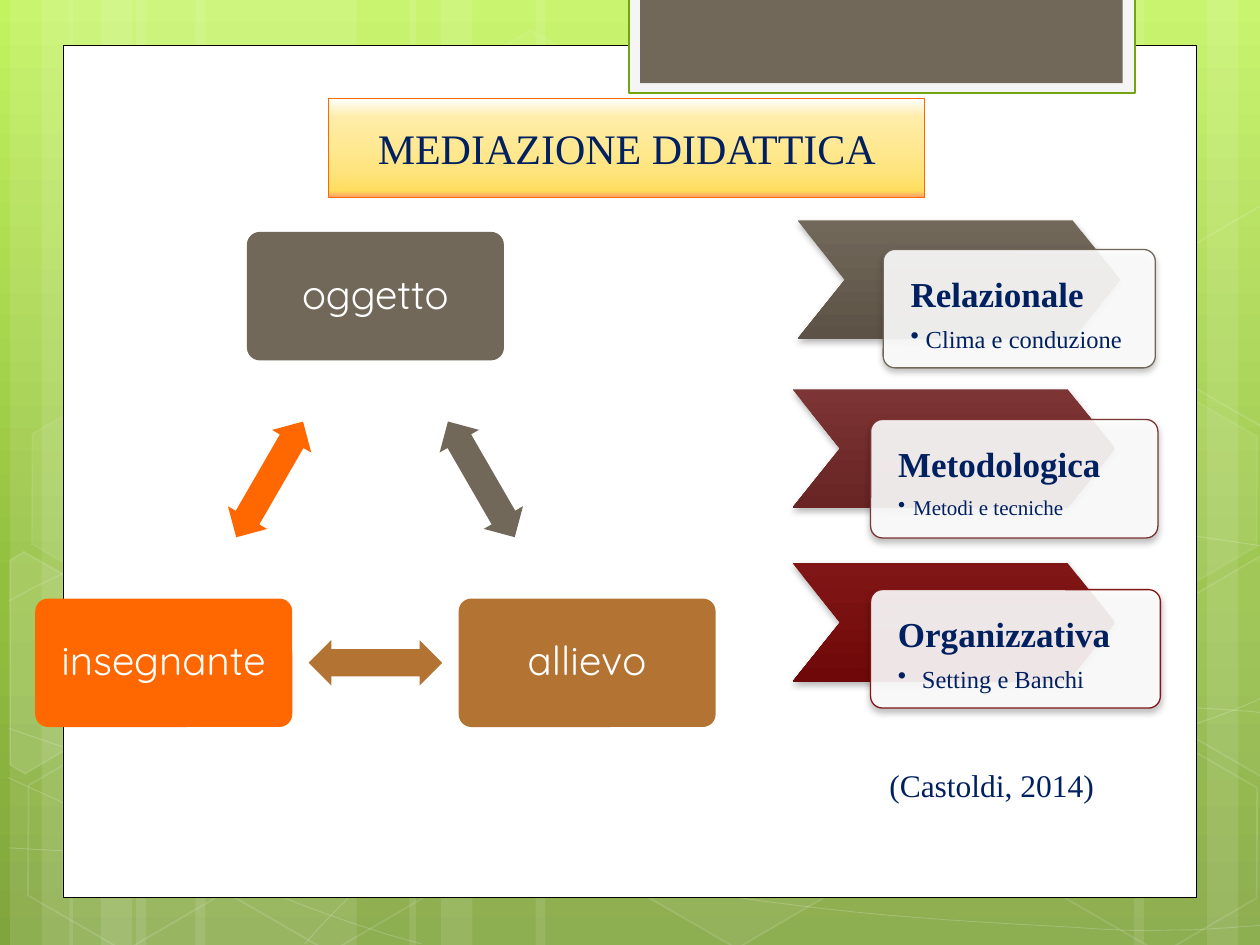
from lxml.etree import SubElement
from pptx import Presentation
from pptx.dml.color import RGBColor
from pptx.enum.shapes import MSO_SHAPE as Shape
from pptx.enum.text import MSO_ANCHOR as Anchor, PP_ALIGN as Align
from pptx.oxml.ns import qn
from pptx.util import Inches, Pt


def paint(fill, root, colour, alpha=100):
    if isinstance(colour, str):
        fill.solid()
        fill.fore_color.rgb = RGBColor.from_string(colour)
        if alpha < 100:
            node = list(root.iter(qn("a:srgbClr")))[-1]
            SubElement(node, qn("a:alpha"), val=str(alpha * 1000))
        return
    fill.gradient()
    fill.gradient_angle = 270
    stops = list(root.iter(qn("a:gsLst")))[-1]
    for stop in list(stops):
        stops.remove(stop)
    for position, value in colour:
        stop = SubElement(stops, qn("a:gs"), pos=str(position * 1000))
        SubElement(stop, qn("a:srgbClr"), val=value)


def style(shape, fill=None, line=None, width=1, alpha=100, line_alpha=100, shadow=False):
    shape.shadow.inherit = False
    if fill:
        paint(shape.fill, shape.element, fill, alpha)
    else:
        shape.fill.background()
    if line:
        paint(shape.line.fill, shape.element, line, line_alpha)
        shape.line.width = Pt(width)
    else:
        shape.line.fill.background()
    if shadow:
        effects = next(shape.element.iter(qn("a:effectLst")))
        outer = SubElement(effects, qn("a:outerShdw"), blurRad=str(Pt(4)), dist=str(Pt(2)),
                           dir="5400000", rotWithShape="0")
        black = SubElement(outer, qn("a:srgbClr"), val="000000")
        SubElement(black, qn("a:alpha"), val="28000")
    return shape


presentation = Presentation()
presentation.slide_width, presentation.slide_height = Inches(10), Inches(7.5)
slide = presentation.slides.add_slide(presentation.slide_layouts[6])
shapes = slide.shapes
paint(slide.background.fill, slide.element, [(0, "C3F35F"), (62, "93BF3F"), (100, "81A53E")])

stripes = [(1.08, 1.75), (0.08, 0.5), (0.33, 0.83), (1.55, 1.75), (0.55, 0.5), (0.8, 0.83),
           (7.33, 1.75), (9.58, 0.5), (9, 0.83), (4.25, 3.08), (3.25, 0.5), (3.5, 0.83)]
for left, width in stripes:
    stripe = shapes.add_shape(Shape.RECTANGLE, Inches(left), 0, Inches(width), Inches(7.5))
    style(stripe, "FFFFFF", alpha=10)

waves = [
    [(0.07, 6.73), (0.61, 6.76), (1.15, 6.79), (1.9, 6.78), (2.65, 6.77), (3.58, 6.75),
     (4.58, 6.65), (5.58, 6.55), (7, 6.36), (7.92, 6.17), (8.83, 5.98), (9.77, 5.68), (10.07, 5.51)],
    [(0.07, 4.77), (0.36, 4.61), (0.65, 4.46), (1.21, 4.31), (1.78, 4.16), (2.59, 3.94),
     (3.47, 3.87), (4.36, 3.8), (5.44, 3.79), (6.54, 3.87), (7.64, 3.95), (9.47, 4.26), (10.07, 4.34)],
    [(0.06, 6.17), (1.27, 6.72), (2.47, 7.27), (3.34, 7.49)],
    [(0.07, 5.78), (0.38, 5.89), (0.7, 6), (1.28, 6.16), (1.86, 6.31), (2.73, 6.56), (3.57, 6.73),
     (4.4, 6.9), (5.45, 7.08), (6.28, 7.18), (7.11, 7.29), (8, 7.33), (8.53, 7.36),
     (9.05, 7.4), (9.19, 7.38), (9.45, 7.38), (9.71, 7.37), (9.89, 7.35), (10.07, 7.34)],
    [(2.42, 7.49), (2.6, 7.29), (2.78, 7.09), (3.02, 6.91), (3.26, 6.73), (3.6, 6.53), (3.88, 6.39),
     (4.16, 6.25), (4.33, 6.19), (4.7, 6.09), (5.06, 5.99), (5.73, 5.85), (6.08, 5.78),
     (6.44, 5.71), (6.49, 5.71), (6.8, 5.69), (7.11, 5.66), (7.6, 5.63), (7.94, 5.62),
     (8.29, 5.61), (8.86, 5.62), (8.86, 5.62), (9.1, 5.62), (9.3, 5.62), (9.53, 5.62),
     (9.71, 5.63), (9.88, 5.64), (10.06, 5.66)],
]
steps = 10
for wave in waves:
    points = []
    for start in range(0, len(wave) - 1, 3):
        for step in range(1, steps + 1):
            t = step / steps
            weights = ((1 - t) ** 3, 3 * t * (1 - t) ** 2, 3 * t ** 2 * (1 - t), t ** 3)
            controls = list(zip(weights, wave[start:start + 4]))
            points.append([Inches(sum(w * p[axis] for w, p in controls)) for axis in (0, 1)])
    builder = shapes.build_freeform(*[Inches(value) for value in wave[0]])
    builder.add_line_segments(points, close=False)
    style(builder.convert_to_shape(), line="FFFFFF", width=0.5, line_alpha=20)

hexagons = [(3.34, 0.36, 4, 8), (4.97, 5.89, 6, 12), (0.11, 5.91, 0, 12), (0.14, 3.12, 7, 8),
            (1.74, 5.92, 0, 12), (7.53, 4.53, 10, 12), (8.34, 5.93, 0, 12), (8.34, 3.14, 7, 8)]
for left, top, alpha, line_alpha in hexagons:
    hexagon = shapes.add_shape(Shape.HEXAGON, Inches(left), Inches(top), Inches(1.75), Inches(1.52))
    hexagon.adjustments[0] = 0.285
    hexagon.rotation = 30
    style(hexagon, "FFFFFF" if alpha else None, "FFFFFF", alpha=alpha, line_alpha=line_alpha)

cut_hexagons = [
    ([(0.08, 4.45), (0.19, 4.38), (0.96, 4.82), (0.95, 5.7), (0.2, 6.14), (0.08, 6.07)], 10),
    ([(9.26, 4.85), (10.01, 4.41), (10.09, 4.46), (10.09, 6.13), (10.02, 6.17), (9.26, 5.73)], 4),
    ([(9.26, 2.07), (10.01, 1.63), (10.1, 1.68), (10.09, 3.35), (10.02, 3.39), (9.26, 2.95)], 0),
]
for outline, alpha in cut_hexagons:
    corners = [(Inches(x), Inches(y)) for x, y in outline]
    builder = shapes.build_freeform(*corners[0])
    builder.add_line_segments(corners[1:], close=True)
    style(builder.convert_to_shape(), "FFFFFF" if alpha else None, "FFFFFF",
          alpha=alpha, line_alpha=12)

panels = [((0.5, 0.36, 9, 6.76), "FFFFFF", "000000", 0.5),
          ((4.99, -0.02, 4.02, 0.76), "F5F5F5", "74A510", 1.25),
          ((5.08, -0.02, 3.83, 0.68), "71685A", None, 0)]
for box, fill, line, width in panels:
    panel = shapes.add_shape(Shape.RECTANGLE, *[Inches(value) for value in box])
    style(panel, fill, line, width)

texts = []
nodes = [("oggetto", 2.98, 2.35, "71685A"), ("allievo", 4.66, 5.26, "B27333"),
         ("insegnante", 1.3, 5.26, "FF6700")]
for index, (label, x, y, colour) in enumerate(nodes):
    node = shapes.add_shape(Shape.ROUNDED_RECTANGLE, Inches(x - 1.02), Inches(y - 0.51),
                            Inches(2.04), Inches(1.02))
    node.adjustments[0] = 0.1
    style(node, colour)
    texts.append((node, Anchor.MIDDLE, (0.1, 0.1), [
        (label, {"size": Pt(23), "name": "Quicksand"}, "FFFFFF",
         {"alignment": Align.CENTER, "line_spacing": 0.9}, 0)]))
    next_x, next_y = nodes[(index + 1) % 3][1:3]
    arrow = shapes.add_shape(Shape.LEFT_RIGHT_ARROW, Inches((x + next_x) / 2 - 0.53),
                             Inches((y + next_y) / 2 - 0.18), Inches(1.06), Inches(0.36))
    arrow.adjustments[0], arrow.adjustments[1] = 0.6, 0.5
    arrow.rotation = 60 + 120 * index
    style(arrow, colour)

serif, navy = "Times New Roman", "002060"
dimensions = [
    ("Relazionale", "Clima e conduzione", 14, 0.12, (6.33, 1.75), (7.01, 1.98, 2.16), "71685A", "5C5346"),
    ("Metodologica", "Metodi e tecniche", 12, 0.12, (6.29, 3.09), (6.91, 3.33, 2.28), "7D3434", "692424"),
    ("Organizzativa", "Setting e Banchi", 14, 0.19, (6.29, 4.47), (6.91, 4.68, 2.3), "811616", "6F0909"),
]
for heading, detail, size, indent, corner, card_box, light, dark in dimensions:
    chevron = shapes.add_shape(Shape.CHEVRON, *[Inches(value) for value in (*corner, 2.56, 0.94)])
    chevron.adjustments[0] = 0.4
    style(chevron, [(0, light), (100, dark)], shadow=True)
    card = shapes.add_shape(Shape.ROUNDED_RECTANGLE, *[Inches(value) for value in (*card_box, 0.94)])
    card.adjustments[0] = 0.1
    style(card, "FFFFFF", light, 0.75, alpha=90, shadow=True)
    texts.append((card, Anchor.TOP, (0.19, 0.19), [
        (heading, {"size": Pt(20), "name": serif, "bold": True}, navy,
         {"alignment": Align.LEFT, "line_spacing": 0.9, "space_after": Pt(7)}, 0),
        (detail, {"size": Pt(size), "name": serif, "bold": False}, navy,
         {"alignment": Align.LEFT, "line_spacing": 0.9, "space_after": Pt(2), "level": 1}, indent)]))

citation = shapes.add_textbox(Inches(6.96), Inches(6.03), Inches(2.2), Inches(0.4))
texts.append((citation, Anchor.BOTTOM, (0.1, 0.05), [
    ("(Castoldi, 2014)", {"size": Pt(18), "name": serif}, navy, {"alignment": Align.LEFT}, 0)]))
banner = shapes.add_shape(Shape.RECTANGLE, Inches(2.61), Inches(0.78), Inches(4.73), Inches(0.79))
style(banner, [(0, "FFFFFF"), (19, "FFEDA9"), (74, "FFE47E"), (87, "FFDF68"), (93, "FFDD5D"),
               (99, "FFA466")], "FF6700", 0.75)
texts.append((banner, Anchor.MIDDLE, (0, 0.05), [
    ("MEDIAZIONE DIDATTICA", {"size": Pt(24), "name": serif}, navy, {"alignment": Align.CENTER}, 0)]))

for shape, anchor, (side, edge), lines in texts:
    frame = shape.text_frame
    frame_format = {"word_wrap": True, "vertical_anchor": anchor,
                    "margin_left": Inches(side), "margin_right": Inches(side),
                    "margin_top": Inches(edge), "margin_bottom": Inches(edge)}
    for name, value in frame_format.items():
        setattr(frame, name, value)
    for index, (text, font_format, colour, paragraph_format, indent) in enumerate(lines):
        paragraph = frame.add_paragraph() if index else frame.paragraphs[0]
        run = paragraph.add_run()
        run.text = text
        for target, values in ((run.font, font_format), (paragraph, paragraph_format)):
            for name, value in values.items():
                setattr(target, name, value)
        paint(run.font.fill, shape.element, colour)
        if indent:
            properties = paragraph._p.get_or_add_pPr()
            properties.set("marL", str(Inches(indent)))
            properties.set("indent", str(-Inches(indent)))
            SubElement(properties, qn("a:buChar"), char="•")

presentation.save("out.pptx")
